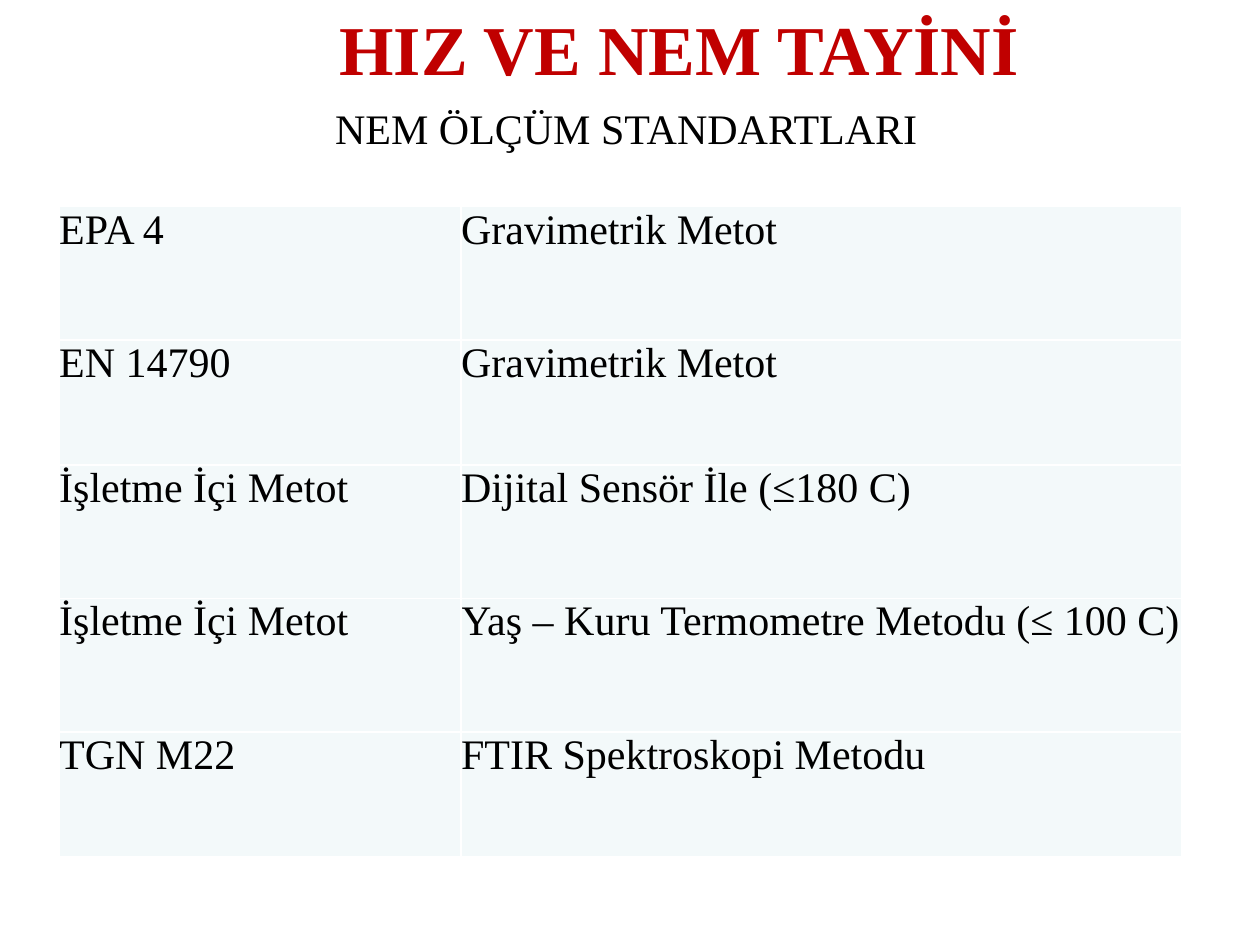
from pptx import Presentation
from pptx.dml.color import RGBColor
from pptx.enum.text import MSO_ANCHOR as ANCHOR, PP_ALIGN as ALIGN
from pptx.oxml.ns import qn
from pptx.util import Inches, Pt
from lxml.etree import SubElement

BLACK = RGBColor(0x00, 0x00, 0x00)
RED = RGBColor(0xC0, 0x00, 0x00)
PALE = RGBColor(0xF3, 0xF9, 0xFA)
WHITE = RGBColor(0xFF, 0xFF, 0xFF)
FONT = "Times New Roman"
LEFT = Inches(0.47)
COLS = [3.19, 5.72]
ROWS = [1.06, 0.99, 1.06, 1.06, 0.99]
STANDARDS = [
    ("EPA 4", "Gravimetrik Metot"),
    ("EN 14790", "Gravimetrik Metot"),
    ("İşletme İçi Metot", "Dijital Sensör İle (≤180 C)"),
    ("İşletme İçi Metot", "Yaş – Kuru Termometre Metodu (≤ 100 C)"),
    ("TGN M22", "FTIR Spektroskopi Metodu"),
]


def add_text(tf, text, size=24, color=BLACK, bold=False, align=ALIGN.LEFT):
    p = tf.paragraphs[0]
    p.alignment = align
    r = p.add_run()
    r.text = text
    r.font.name = FONT
    r.font.size = Pt(size)
    r.font.bold = bold
    r.font.color.rgb = color
    return p


def add_borders(cell, color, width):
    tcPr = cell._tc.get_or_add_tcPr()
    for side in ("a:lnL", "a:lnR", "a:lnT", "a:lnB"):
        ln = SubElement(tcPr, qn(side), w=str(Pt(width)))
        fill = SubElement(ln, qn("a:solidFill"))
        SubElement(fill, qn("a:srgbClr"), val=str(color))


prs = Presentation()
prs.slide_width, prs.slide_height = Inches(10), Inches(7.5)
s = prs.slides.add_slide(prs.slide_layouts[5])

title = s.shapes.title
title.left, title.top = LEFT, Inches(0.7)
title.width, title.height = Inches(9), Inches(0.63)
title.text_frame.vertical_anchor = ANCHOR.MIDDLE
add_text(title.text_frame, "NEM ÖLÇÜM STANDARTLARI", align=ALIGN.CENTER)

frame = s.shapes.add_table(len(ROWS), len(COLS), LEFT, Inches(1.64),
                           Inches(sum(COLS)), Inches(sum(ROWS)))
table = frame.table
table.first_row = table.horz_banding = False
for col, width in zip(table.columns, COLS):
    col.width = Inches(width)
for row, height, texts in zip(table.rows, ROWS, STANDARDS):
    row.height = Inches(height)
    for cell, text in zip(row.cells, texts):
        cell.margin_left = cell.margin_right = 0
        cell.margin_top = cell.margin_bottom = 0
        add_borders(cell, WHITE, 1)
        cell.fill.solid()
        cell.fill.fore_color.rgb = PALE
        add_text(cell.text_frame, text)

heading = s.shapes.add_textbox(0, 0, prs.slide_width, prs.slide_height // 10)
tf = heading.text_frame
tf.word_wrap = True
tf.vertical_anchor = ANCHOR.MIDDLE
p = add_text(tf, "HIZ VE NEM TAYİNİ", 40, RED, True, ALIGN.CENTER)
p.space_after = Pt(6)
pPr = p._p.get_or_add_pPr()
pPr.set("marL", str(Inches(0.28)))
pPr.set("indent", str(Inches(0.5)))

prs.save("out.pptx")
